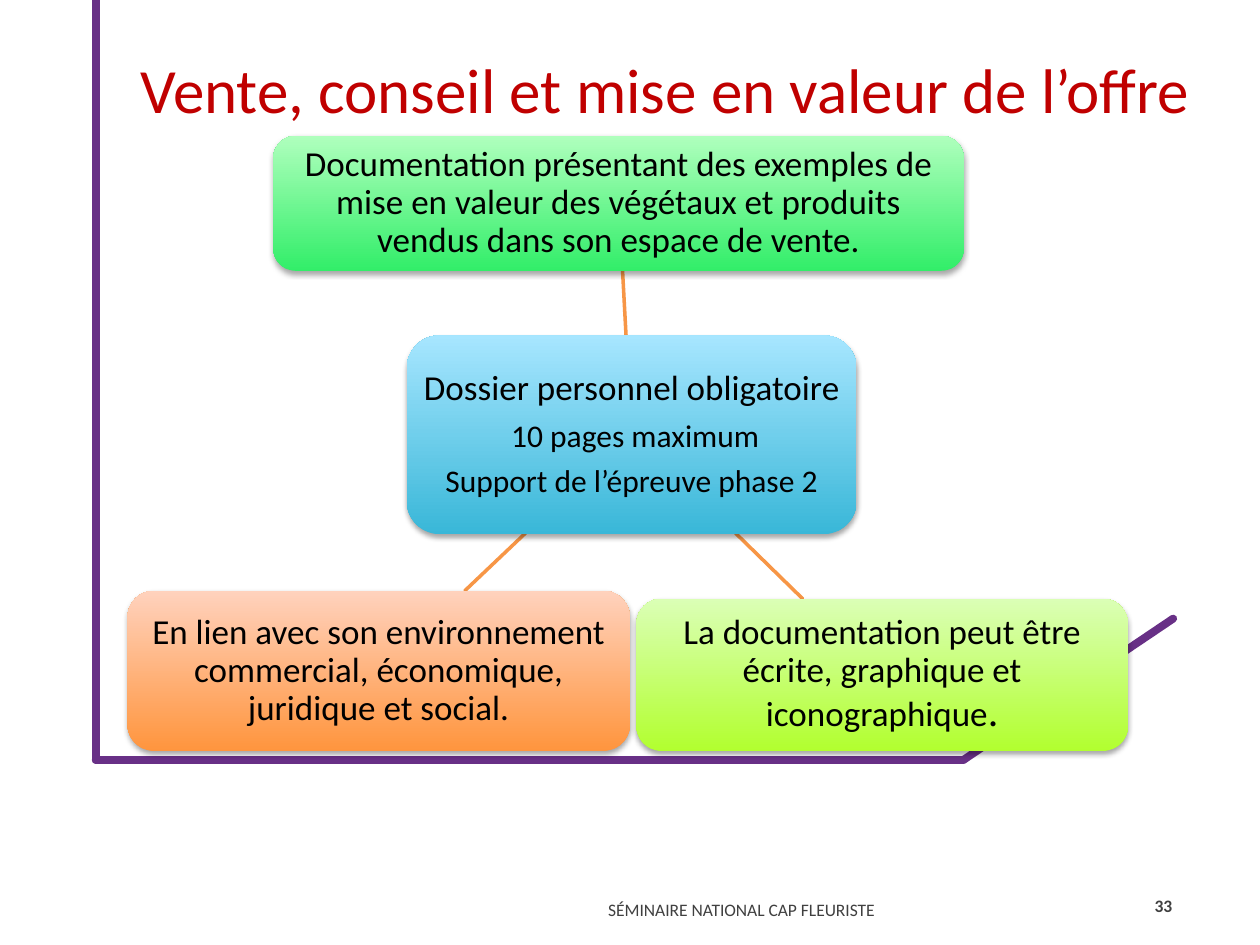
from lxml.etree import SubElement
from pptx import Presentation
from pptx.dml.color import RGBColor
from pptx.enum.shapes import MSO_CONNECTOR, MSO_SHAPE
from pptx.enum.text import MSO_ANCHOR, PP_ALIGN
from pptx.oxml.ns import qn
from pptx.util import Cm, Pt

COLOURS = {
    "title": "C00000",
    "text": "000000",
    "footer": "404040",
    "frame": "683086",
    "link": "F79646",
    # Gradients: bottom, top
    "green": ("32EE69", "AFFFBD"),
    "blue": ("39B7D8", "A7E6FF"),
    "lime": ("B2FF2F", "DBFFB6"),
    "orange": ("FF953E", "FFD2BD"),
}


class PageBuilder:
    font_name = "Calibri"

    def __init__(self, page):
        self.page = page

    def style(self, font, size, colour, bold=False):
        font.name = self.font_name
        font.size = Pt(size)
        font.bold = bold
        font.color.rgb = RGBColor.from_string(COLOURS[colour])

    def line(self, start, end, colour, width):
        points = [Cm(value) for value in (*start, *end)]
        line = self.page.shapes.add_connector(MSO_CONNECTOR.STRAIGHT, *points)
        line.line.color.rgb = RGBColor.from_string(COLOURS[colour])
        line.line.width = Pt(width)
        properties = line._element.spPr
        properties.find(qn("a:ln")).set("cap", "rnd")
        SubElement(properties, qn("a:effectLst"))

    def label(self, place, text, size, colour, align, anchor=MSO_ANCHOR.MIDDLE, bold=False):
        box = self.page.shapes.add_textbox(*map(Cm, place))
        frame = box.text_frame
        frame.word_wrap = True
        frame.vertical_anchor = anchor
        frame.text = text
        paragraph = frame.paragraphs[0]
        paragraph.alignment = align
        self.style(paragraph.runs[0].font, size, colour, bold)

    def card(self, place, gradient, paragraphs):
        """Each paragraph is a list of (text, size) spans."""
        box = self.page.shapes.add_shape(MSO_SHAPE.ROUNDED_RECTANGLE, *map(Cm, place))
        box.fill.gradient()
        box.fill.gradient_angle = 90
        for stop, colour in zip(box.fill.gradient_stops, COLOURS[gradient]):
            stop.color.rgb = RGBColor.from_string(colour)
        box.line.fill.background()
        self.soft_shadow(box)

        frame = box.text_frame
        frame.word_wrap = True
        frame.vertical_anchor = MSO_ANCHOR.MIDDLE
        frame.margin_left = frame.margin_right = Cm(0.15)
        frame.margin_top = frame.margin_bottom = Cm(0.15)
        for index, spans in enumerate(paragraphs):
            paragraph = frame.add_paragraph() if index else frame.paragraphs[0]
            paragraph.alignment = PP_ALIGN.CENTER
            paragraph.line_spacing = 0.9
            paragraph.space_after = Pt(0.35 * spans[0][1])
            for text, size in spans:
                span = paragraph.add_run()
                span.text = text
                self.style(span.font, size, "text")

    def soft_shadow(self, box):
        box.shadow.inherit = False
        effects = box._element.spPr.find(qn("a:effectLst"))
        shadow = SubElement(effects, qn("a:outerShdw"), blurRad=str(Pt(3.1)),
                            dist=str(Pt(1.8)), dir="5400000", rotWithShape="0")
        colour = SubElement(shadow, qn("a:srgbClr"), val="000000")
        SubElement(colour, qn("a:alpha"), val="35000")


def main():
    deck = Presentation()
    deck.slide_width, deck.slide_height = Cm(25.4), Cm(19.05)
    builder = PageBuilder(deck.slides.add_slide(deck.slide_layouts[6]))

    # Purple frame
    corners = [(1.93, 0), (1.93, 15.32), (19.42, 15.32), (23.65, 12.47)]
    for start, end in zip(corners, corners[1:]):
        builder.line(start, end, "frame", 4.5)

    # Footer and page number
    builder.label((12.01, 17.83, 9.53, 1.02), "SÉMINAIRE NATIONAL CAP FLEURISTE",
                  10, "footer", PP_ALIGN.LEFT)
    builder.label((22.76, 17.75, 1.12, 1.02), "33", 10, "footer", PP_ALIGN.RIGHT, bold=True)

    # Title
    builder.label((2.26, 0.89, 22.3, 1.8), "Vente, conseil et mise en valeur de l’offre",
                  36, "title", PP_ALIGN.CENTER, MSO_ANCHOR.TOP)

    # Links from the central card
    for start, end in [((12.62, 6.76), (12.55, 5.46)),
                       ((14.83, 10.75), (16.18, 12.07)),
                       ((10.59, 10.75), (9.37, 11.91))]:
        builder.line(start, end, "link", 2)

    # Central card and its three satellites
    builder.card((8.2, 6.76, 9.07, 4.01), "blue", [
        [("Dossier personnel obligatoire", 20)],
        [(" 10 pages maximum", 18)],
        [("Support de l’épreuve phase 2", 18)],
    ])
    builder.card((5.51, 2.74, 13.92, 2.72), "green", [
        [("Documentation présentant des exemples de mise en valeur des végétaux "
          "et produits vendus dans son espace de vente.", 20)],
    ])
    builder.card((12.83, 12.07, 9.91, 3.07), "lime", [
        [("La documentation peut être écrite, graphique et iconographique", 20), (".", 24)],
    ])
    builder.card((2.57, 11.91, 10.13, 3.23), "orange", [
        [("En lien avec son environnement commercial, économique, juridique et social.", 20)],
    ])

    deck.save("out.pptx")


if __name__ == "__main__":
    main()
